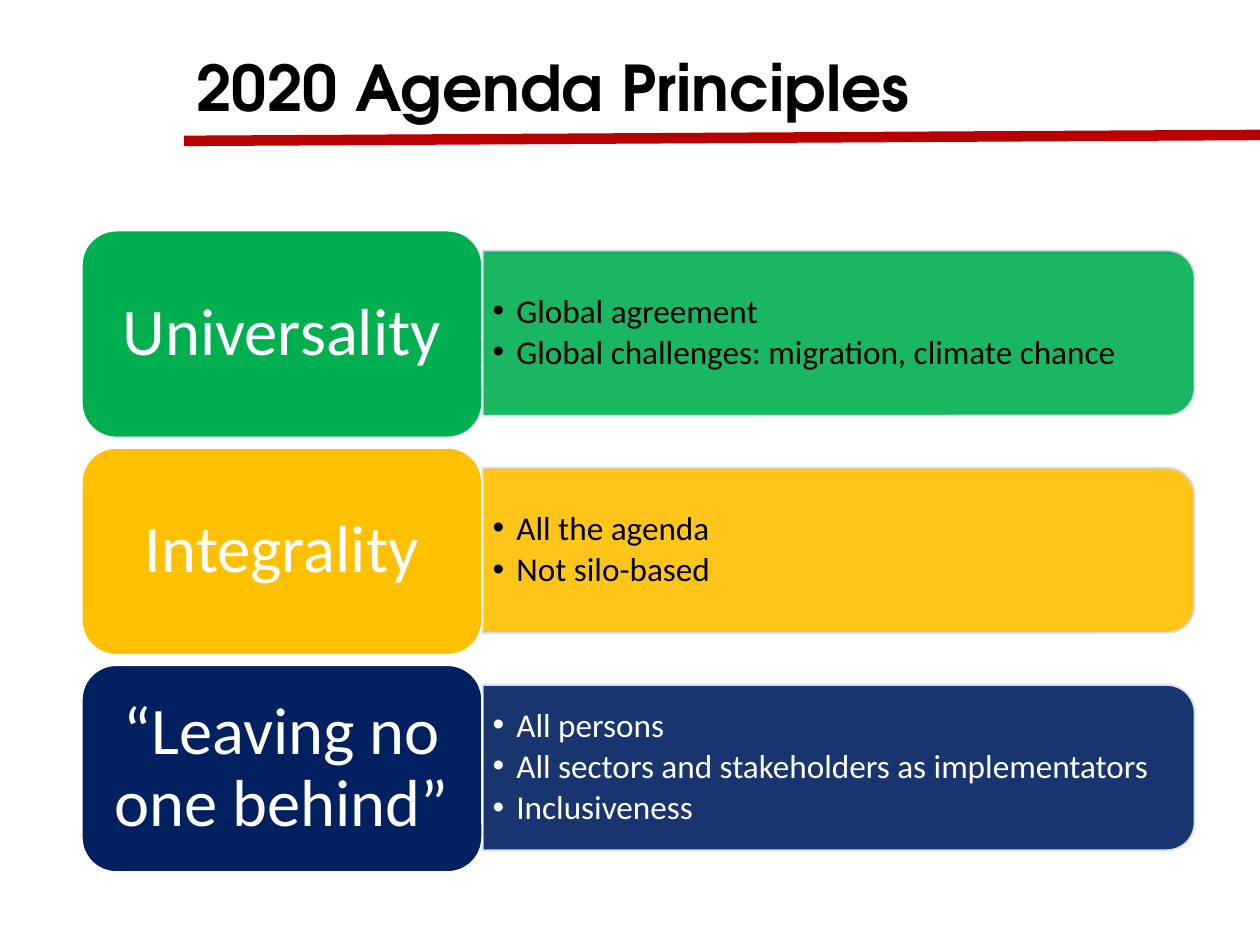
from lxml.etree import SubElement
from pptx import Presentation
from pptx.dml.color import RGBColor
from pptx.enum.shapes import MSO_CONNECTOR, MSO_SHAPE
from pptx.enum.text import MSO_ANCHOR, MSO_AUTO_SIZE, PP_ALIGN
from pptx.oxml.ns import qn
from pptx.util import Cm, Pt

COLORS = {
    "rule": "B80000", "black": "000000", "white": "FFFFFF", "edge": "D2DEEF",
    "green": "00B050", "amber": "FFC000", "navy": "002060",
}
PRINCIPLES = [
    ("Universality", "green", "black",
     ["Global agreement", "Global challenges: migration, climate chance"]),
    ("Integrality", "amber", "black", ["All the agenda", "Not silo-based"]),
    ("“Leaving no one behind”", "navy", "white",
     ["All persons", "All sectors and stakeholders as implementators", "Inclusiveness"]),
]
PITCH = 4.38


def add_run(p, text, size, color, font="Calibri", bold=False):
    r = p.add_run()
    r.text = text
    r.font.name = font
    r.font.size = Pt(size)
    r.font.bold = bold
    r.font.color.rgb = RGBColor.from_string(COLORS[color])


def add_box(s, kind, box, fill, line):
    sp = s.shapes.add_shape(kind, *[Cm(v) for v in box])
    sp.shadow.inherit = False
    sp.fill.solid()
    sp.fill.fore_color.rgb = RGBColor.from_string(COLORS[fill])
    sp.line.color.rgb = RGBColor.from_string(COLORS[line])
    sp.line.width = Pt(1)
    return sp


prs = Presentation()
prs.slide_width, prs.slide_height = Cm(25.4), Cm(19.05)
s = prs.slides.add_slide(prs.slide_layouts.get_by_name("Comparison"))
title, *bodies = list(s.placeholders)[:4]
for spare in list(s.placeholders)[4:]:
    if not spare.has_text_frame or spare.placeholder_format.idx == 4:
        spare.element.getparent().remove(spare.element)

title.left, title.top, title.width, title.height = Cm(3.71), Cm(0.56), Cm(21.13), Cm(2.34)
tf = title.text_frame
tf.auto_size = MSO_AUTO_SIZE.NONE
tf.vertical_anchor = MSO_ANCHOR.MIDDLE
p = tf.paragraphs[0]
p.alignment = PP_ALIGN.LEFT
add_run(p, "2020 Agenda Principles", 36, "black", "TeX Gyre Adventor", True)

rule = s.shapes.add_connector(MSO_CONNECTOR.STRAIGHT, Cm(3.71), Cm(2.84), Cm(25.4), Cm(2.72))
rule.line.color.rgb = RGBColor.from_string(COLORS["rule"])
rule.line.width = Pt(6)
SubElement(rule._element.spPr, qn("a:effectLst"))

for i, (name, fill, ink, points) in enumerate(PRINCIPLES):
    dy = i * PITCH
    panel = add_box(s, MSO_SHAPE.ROUND_2_SAME_RECTANGLE,
                    (15.24, -0.46 + dy, 3.33, 14.35), fill, "edge")
    panel.rotation = 90
    color = panel._element.spPr.find(qn("a:solidFill"))[0]
    SubElement(color, qn("a:alpha"), val="90000")

    body = bodies[i]
    body.left, body.top, body.width, body.height = Cm(9.73), Cm(5.21 + dy), Cm(14.2), Cm(3)
    s.shapes._spTree.append(body._element)
    tf = body.text_frame
    tf.auto_size = MSO_AUTO_SIZE.NONE
    tf.vertical_anchor = MSO_ANCHOR.MIDDLE
    tf.margin_left = tf.margin_right = Cm(0.2)
    tf.margin_top = tf.margin_bottom = Cm(0.1)
    for j, point in enumerate(points):
        p = tf.add_paragraph() if j else tf.paragraphs[0]
        p.line_spacing = 0.9
        p.space_before = Pt(0)
        p.space_after = Pt(3)
        pPr = p._p.get_or_add_pPr()
        pPr.set("marL", str(Cm(0.48)))
        pPr.set("indent", str(-Cm(0.48)))
        SubElement(pPr, qn("a:buFont"), typeface="Arial")
        SubElement(pPr, qn("a:buChar"), char="•")
        add_run(p, point, 19, ink)

    label = add_box(s, MSO_SHAPE.ROUNDED_RECTANGLE, (1.65, 4.65 + dy, 8.07, 4.17), fill, "white")
    tf = label.text_frame
    tf.word_wrap = True
    tf.vertical_anchor = MSO_ANCHOR.MIDDLE
    tf.margin_left = tf.margin_right = Cm(0.4)
    tf.margin_top = tf.margin_bottom = Cm(0.2)
    p = tf.paragraphs[0]
    p.alignment = PP_ALIGN.CENTER
    p.line_spacing = 0.9
    add_run(p, name, 38, "white")

prs.save("out.pptx")
